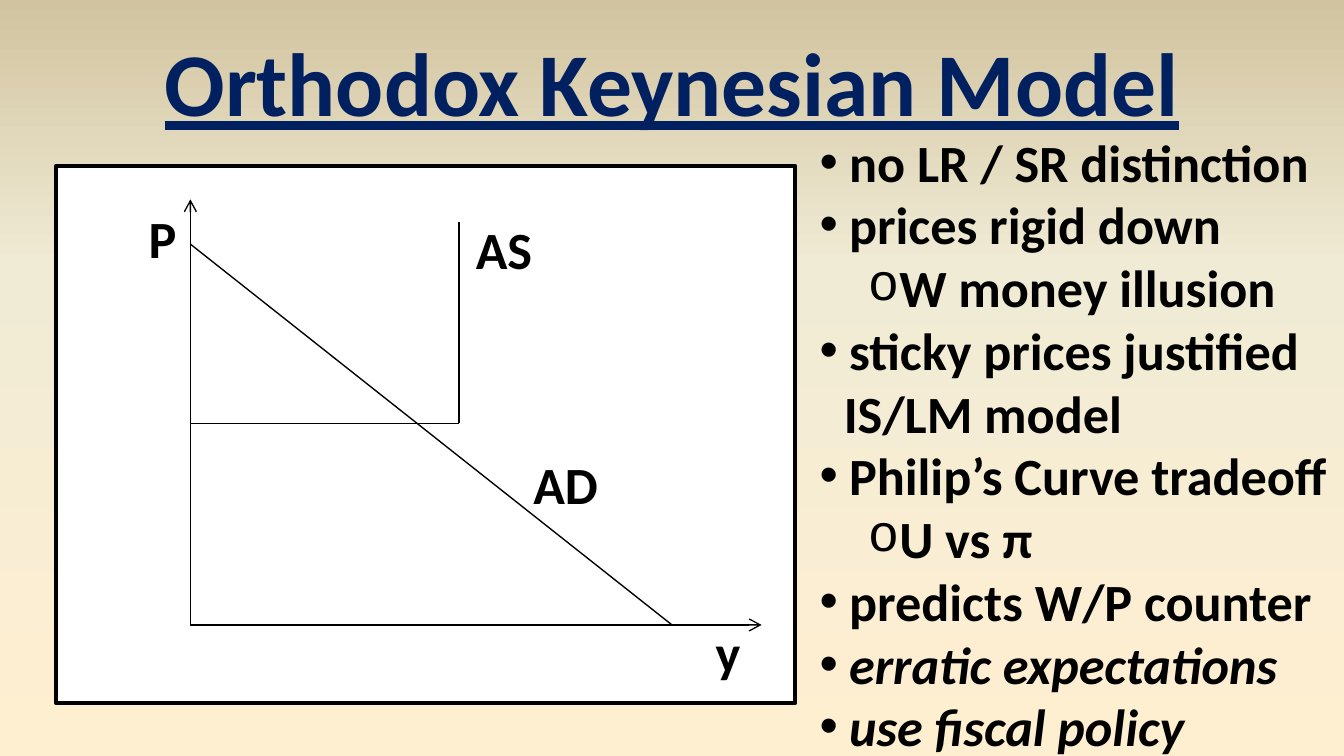
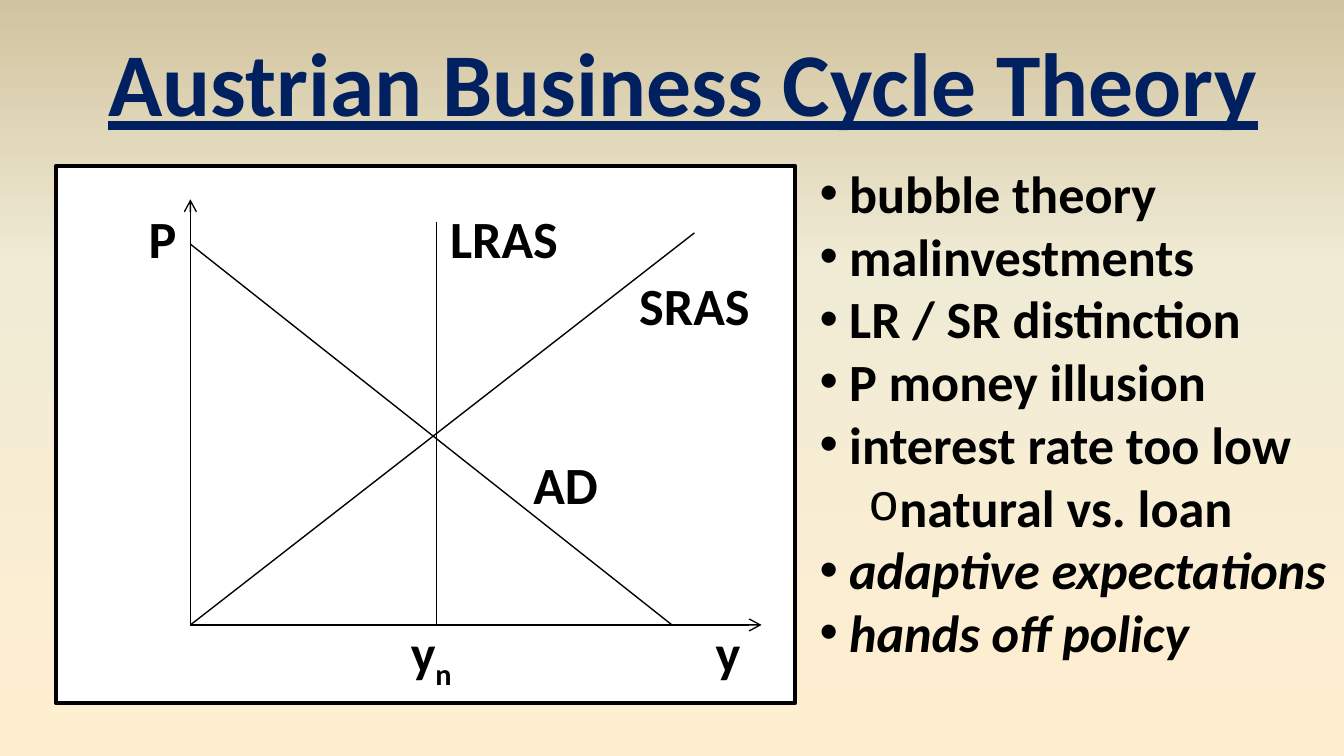
from lxml.etree import SubElement
from pptx import Presentation
from pptx.dml.color import RGBColor
from pptx.enum.shapes import MSO_CONNECTOR, MSO_SHAPE
from pptx.enum.text import MSO_AUTO_SIZE, PP_ALIGN
from pptx.oxml.ns import qn
from pptx.util import Inches, Pt

FONT = "Calibri"
HUES = {"title": "002060", "ink": "000000", "paper": "FFFFFF"}
SKY = [(0, "FFEFD1"), (65, "F0EBD5"), (100, "D1C39F")]

# The grid has 120 columns across the slide; rows are as tall as columns are wide.
CELL = Inches(10) // 120
TOP = 14.8  # row where the frame starts
BASE = TOP + 41  # row of the y axis
LEFT = 17  # column of the P axis

# Kind of paragraph: bullet, bullet font, left margin and indent in inches
MARKS = {
    "dot": ("•", "Arial", 0.22, -0.22),
    "sub": ("o", "Courier New", 0.59, -0.23),
    "more": (None, None, 0.18, 0),
}

# Lines: column and row of both ends, rows counted from the frame's top
AXES = [(LEFT, 41, LEFT, 3), (LEFT, 41, 68, 41)]
DEMAND = (LEFT, 7, 60, 41)
# Labels: column, row, width, then the text and an optional subscript
NAMES = [(10, 3, 9, "P", ""), (61, 40, 8, "y", ""), (46, 25, 9, "AD", "")]

PAGES = [
    {
        "title": ("Orthodox Keynesian Model", 13, 94),
        "lines": [(LEFT, 23, 41, 23), (41, 5, 41, 23)],
        "names": [(41, 4, 8, "AS", "")],
        "box": (72, 11, 48, 57.7),
        "notes": [
            ("dot", "no LR / SR distinction"),
            ("dot", "prices rigid down"),
            ("sub", "W money illusion"),
            ("dot", "sticky prices justified"),
            ("more", "IS/LM model"),
            ("dot", "Philip’s Curve tradeoff"),
            ("sub", "U vs π"),
            ("dot", "predicts W/P counter"),
            ("dot", "erratic expectations"),
            ("dot", "use fiscal policy"),
        ],
    },
    {
        "title": ("Austrian Business Cycle Theory", 8, 106),
        "lines": [(62, 6, LEFT, 41), (39, 5, 39, 41)],
        "names": [(55, 9, 14, "SRAS", ""), (38, 3, 14, "LRAS", ""),
                  (34, 40, 9, "y", "n")],
        "box": (72, 13.8, 50, 46.4),
        "notes": [
            ("dot", "bubble theory"),
            ("dot", "malinvestments"),
            ("dot", "LR / SR distinction"),
            ("dot", "P money illusion"),
            ("dot", "interest rate too low"),
            ("sub", "natural vs. loan"),
            ("dot", "adaptive expectations"),
            ("dot", "hands off policy"),
        ],
    },
]


def add_box(shapes, col, row, wide, high, wrap=True):
    """Add an empty text box on the grid and return its text frame."""
    spot = [int(n * CELL) for n in (col, row, wide, high)]
    frame = shapes.add_textbox(*spot).text_frame
    frame.word_wrap = wrap
    frame.auto_size = MSO_AUTO_SIZE.SHAPE_TO_FIT_TEXT
    return frame


def add_run(para, text, size=28, hue="ink"):
    run = para.add_run()
    run.text = text
    run.font.name = FONT
    run.font.size = Pt(size)
    run.font.bold = True
    run.font.color.rgb = RGBColor.from_string(HUES[hue])
    return run


deck = Presentation()
deck.slide_width = Inches(10)
deck.slide_height = Inches(5.625)

for page in PAGES:
    slide = deck.slides.add_slide(deck.slide_layouts[6])

    # Background
    fill = slide.background.fill
    fill.gradient()
    fill.gradient_angle = 90
    stops = slide.element.find(".//" + qn("a:gsLst"))
    for stop in list(stops):
        stops.remove(stop)
    for place, hue in SKY:
        stop = SubElement(stops, qn("a:gs"), pos=str(place * 1000))
        SubElement(stop, qn("a:srgbClr"), val=hue)

    # Title
    text, col, wide = page["title"]
    para = add_box(slide.shapes, col, 1.8, wide, 10.9, wrap=False).paragraphs[0]
    para.alignment = PP_ALIGN.CENTER
    add_run(para, text, 48, "title").font.underline = True

    # Graph
    graph = slide.shapes.add_group_shape().shapes
    panel = graph.add_shape(MSO_SHAPE.RECTANGLE, 5 * CELL, int(TOP * CELL),
                            66 * CELL, 48 * CELL)
    panel.shadow.inherit = False
    panel.fill.solid()
    panel.fill.fore_color.rgb = RGBColor.from_string(HUES["paper"])
    panel.line.color.rgb = RGBColor.from_string(HUES["ink"])
    panel.line.width = Pt(2)

    for ends in AXES + [DEMAND] + page["lines"]:
        x1, y1, x2, y2 = ends
        line = graph.add_connector(
            MSO_CONNECTOR.STRAIGHT, x1 * CELL, int((TOP + y1) * CELL),
            x2 * CELL, int((TOP + y2) * CELL))
        line.line.color.rgb = RGBColor.from_string(HUES["ink"])
        line.line.width = Pt(0.75)
        props = line.element.spPr
        SubElement(props, qn("a:effectLst"))
        if ends in AXES:
            SubElement(props.find(qn("a:ln")), qn("a:tailEnd"), type="arrow")

    for col, row, wide, text, low in NAMES + page["names"]:
        para = add_box(graph, col, TOP + row, wide, 6.8).paragraphs[0]
        para.alignment = PP_ALIGN.CENTER
        add_run(para, text)
        if low:
            run = add_run(para, low)
            run.font.element.set("baseline", "-25000") if hasattr(
                run.font, "element") else run._r.get_or_add_rPr().set(
                "baseline", "-25000")

    # Notes; the last two are in italics
    frame = add_box(slide.shapes, *page["box"])
    last = len(page["notes"]) - 2
    for i, (kind, text) in enumerate(page["notes"]):
        para = frame.add_paragraph() if i else frame.paragraphs[0]
        sign, face, left, dent = MARKS[kind]
        para.level = int(kind == "sub")
        props = para._p.get_or_add_pPr()
        props.set("marL", str(Inches(left)))
        props.set("indent", str(Inches(dent)))
        if sign:
            SubElement(props, qn("a:buFont"), typeface=face)
            SubElement(props, qn("a:buChar"), char=sign)
        else:
            SubElement(props, qn("a:buNone"))
        run = add_run(para, text)
        if i >= last:
            run.font.italic = True

deck.save("out.pptx")
